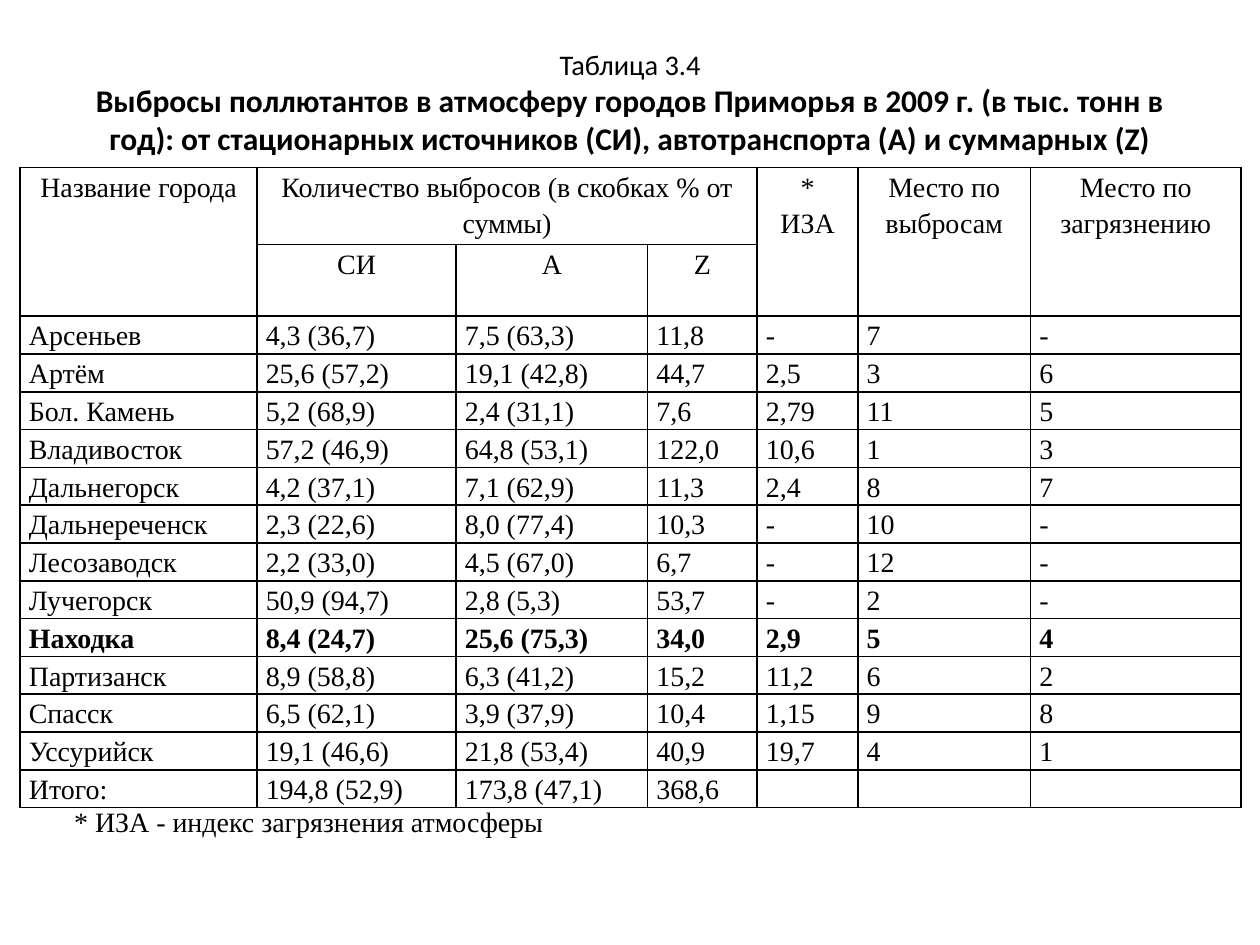
"""Build a slide with a table of pollutant emissions in the towns of Primorye."""
from lxml import etree
from pptx import Presentation
from pptx import util as u
from pptx.dml.color import RGBColor
from pptx.enum import text
from pptx.oxml.ns import qn

BLACK = RGBColor(0, 0, 0)
SERIF, SANS = "Times New Roman", "Calibri"
SIZE = 16

CAPTION = "Таблица 3.4"
HEADING = ("Выбросы поллютантов в атмосферу городов Приморья в 2009 г. (в тыс. тонн в год): "
           "от стационарных источников (СИ), автотранспорта (А) и суммарных (Z)")
FOOTNOTE = "* ИЗА - индекс загрязнения атмосферы"
HEADERS = [
    ("Название города", "Количество выбросов (в скобках % от суммы)", "", "",
     "*\nИЗА", "Место по выбросам", "Место по загрязнению"),
    ("", "СИ", "А", "Z", "", "", ""),
]
TOWNS = [
    ("Арсеньев", "4,3 (36,7)", "7,5 (63,3)", "11,8", "-", "7", "-"),
    ("Артём", "25,6 (57,2)", "19,1 (42,8)", "44,7", "2,5", "3", "6"),
    ("Бол. Камень", "5,2 (68,9)", "2,4 (31,1)", "7,6", "2,79", "11", "5"),
    ("Владивосток", "57,2 (46,9)", "64,8 (53,1)", "122,0", "10,6", "1", "3"),
    ("Дальнегорск", "4,2 (37,1)", "7,1 (62,9)", "11,3", "2,4", "8", "7"),
    ("Дальнереченск", "2,3 (22,6)", "8,0 (77,4)", "10,3", "-", "10", "-"),
    ("Лесозаводск", "2,2 (33,0)", "4,5 (67,0)", "6,7", "-", "12", "-"),
    ("Лучегорск", "50,9 (94,7)", "2,8 (5,3)", "53,7", "-", "2", "-"),
    ("Находка", "8,4 (24,7)", "25,6 (75,3)", "34,0", "2,9", "5", "4"),
    ("Партизанск", "8,9 (58,8)", "6,3 (41,2)", "15,2", "11,2", "6", "2"),
    ("Спасск", "6,5 (62,1)", "3,9 (37,9)", "10,4", "1,15", "9", "8"),
    ("Уссурийск", "19,1 (46,6)", "21,8 (53,4)", "40,9", "19,7", "4", "1"),
    ("Итого:", "194,8 (52,9)", "173,8 (47,1)", "368,6", "", "", ""),
]
ROWS = HEADERS + TOWNS
BOLD_TOWN = "Находка"
COLS = [1.88, 1.58, 1.52, 0.87, 0.8, 1.37, 1.67]
HEIGHTS = [0.61, 0.57] + [0.3] * len(TOWNS)
MERGES = [((0, 0), (1, 0)), ((0, 1), (0, 3))] + [((0, c), (1, c)) for c in (4, 5, 6)]


def place(sp, left, top, width, height):
    sp.left, sp.top, sp.width, sp.height = (u.Inches(v) for v in (left, top, width, height))


def style(r, font, size, bold=False):
    r.font.name, r.font.size, r.font.bold = font, u.Pt(size), bold
    r.font.color.rgb = BLACK


def border(cell, widths):
    tcPr = cell._tc.get_or_add_tcPr()
    for side, width in zip("LRTB", widths):
        ln = etree.SubElement(tcPr, qn(f"a:ln{side}"), w=str(u.Pt(width)))
        fill = etree.SubElement(ln, qn("a:solidFill"))
        etree.SubElement(fill, qn("a:srgbClr"), val=str(BLACK))


def fill_cell(cell, value, header, bold):
    cell.margin_left = cell.margin_right = u.Inches(0.07)
    cell.margin_top = cell.margin_bottom = 0
    cell.text_frame.text = value
    for p in cell.text_frame.paragraphs:
        p.alignment = text.PP_ALIGN.CENTER if header else text.PP_ALIGN.JUSTIFY
        p.line_spacing = 1.15
        for r in p.runs:
            style(r, SERIF, SIZE, bold)
        if not value:
            etree.SubElement(p._p, qn("a:endParaRPr"), sz=str(SIZE * 100))


def add_title(s):
    sp = s.shapes.title
    place(sp, 0.5, 0.3, 9, 1.25)
    tf = sp.text_frame
    tf.text = f"{CAPTION}\v{HEADING}"
    tf.word_wrap, tf.auto_size = True, text.MSO_AUTO_SIZE.NONE
    tf.vertical_anchor = text.MSO_ANCHOR.MIDDLE
    tf.margin_bottom = u.Inches(0.28)
    p = tf.paragraphs[0]
    p.alignment = text.PP_ALIGN.CENTER
    caption, heading = p.runs
    style(caption, SANS, 16.2)
    style(heading, SANS, 18, True)


def add_emissions(s):
    frame = s.shapes.add_table(len(ROWS), len(COLS), u.Inches(0.16), u.Inches(1.33),
                               u.Inches(sum(COLS)), u.Inches(sum(HEIGHTS)))
    table = frame.table
    table.first_row = table.horz_banding = False
    for col, width in zip(table.columns, COLS):
        col.width = u.Inches(width)
    total = len(ROWS) - 1
    for i, values in enumerate(ROWS):
        table.rows[i].height = u.Inches(HEIGHTS[i])
        top, bottom = (1.5 if i == total else 1), (1.5 if i == total - 1 else 1)
        for j, value in enumerate(values):
            cell = table.cell(i, j)
            fill_cell(cell, value, i < len(HEADERS), values[0] == BOLD_TOWN)
            border(cell, (1, 1, top, bottom))
            cell.fill.background()
    for first, last in MERGES:
        table.cell(*first).merge(table.cell(*last))


def add_footnote(s):
    tf = s.shapes.add_textbox(0, u.Inches(6.33), u.Inches(10), u.Inches(0.37)).text_frame
    tf.text = FOOTNOTE
    tf.word_wrap, tf.auto_size = True, text.MSO_AUTO_SIZE.SHAPE_TO_FIT_TEXT
    tf.vertical_anchor = text.MSO_ANCHOR.MIDDLE
    p = tf.paragraphs[0]
    p.alignment = text.PP_ALIGN.JUSTIFY
    p._p.get_or_add_pPr().set("indent", str(u.Inches(0.49)))
    style(p.runs[0], SERIF, SIZE)


def main():
    prs = Presentation()
    prs.slide_width, prs.slide_height = u.Inches(10), u.Inches(7.5)
    s = prs.slides.add_slide(prs.slide_layouts[5])
    add_title(s)
    add_emissions(s)
    add_footnote(s)
    prs.save("out.pptx")


if __name__ == "__main__":
    main()
